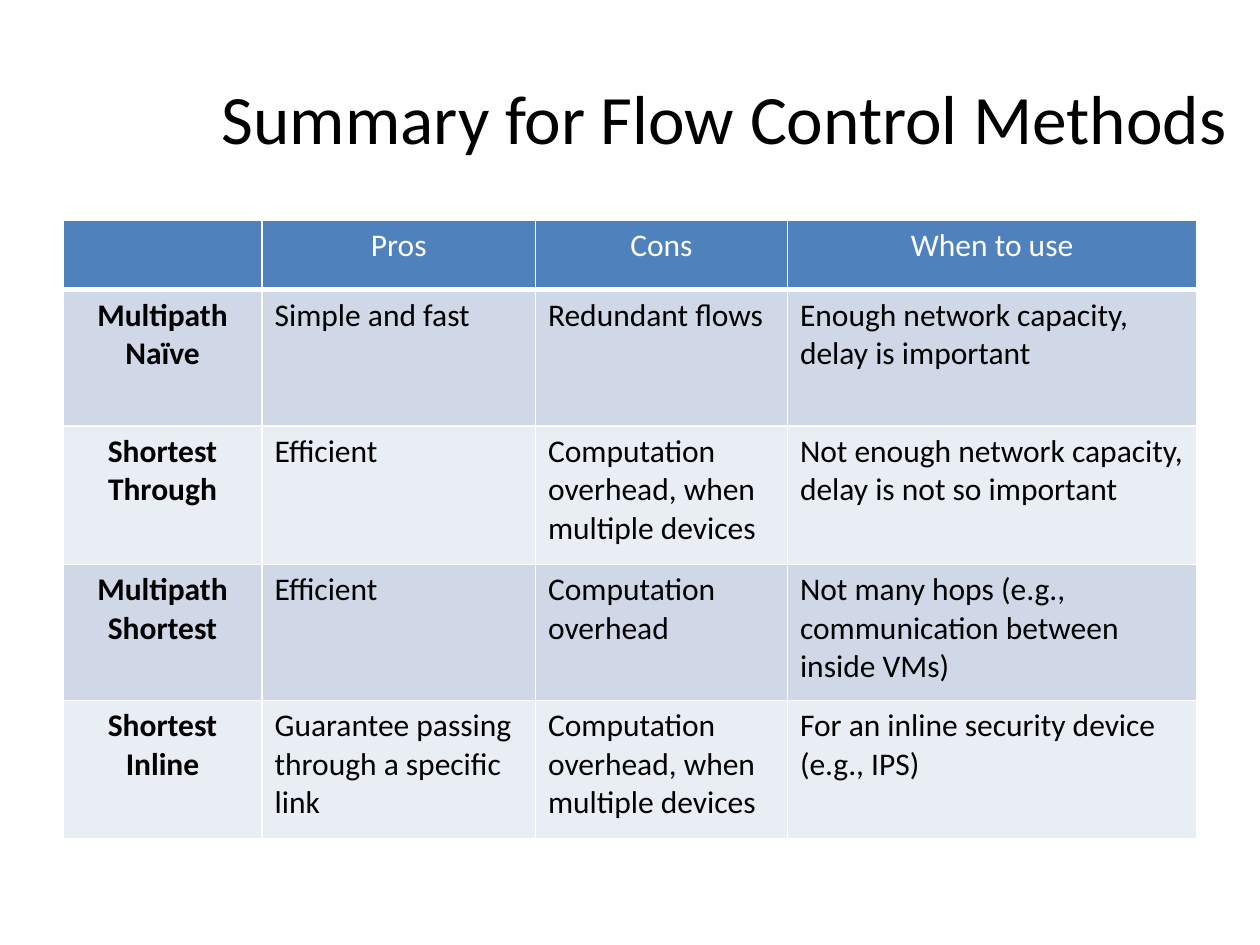
import pptx
import pptx.util
import pptx.dml.color
import pptx.enum.text
import pptx.oxml.ns
import lxml.etree

Inches, Pt = pptx.util.Inches, pptx.util.Pt
RGBColor = pptx.dml.color.RGBColor
PP_ALIGN = pptx.enum.text.PP_ALIGN
qn = pptx.oxml.ns.qn

BLACK = RGBColor(0x00, 0x00, 0x00)
WHITE = RGBColor(0xFF, 0xFF, 0xFF)
HEADER = RGBColor(0x4F, 0x81, 0xBD)
BANDS = [RGBColor(0xE9, 0xED, 0xF4), RGBColor(0xD0, 0xD8, 0xE8)]

COLS = [1.58, 2.17, 2, 3.25]
ROWS = [0.55, 1.08, 1.1, 1.08, 1.1]
METHODS = [
    ["", "Pros", "Cons", "When to use"],
    ["Multipath Naïve", "Simple and fast", "Redundant flows",
     "Enough network capacity, delay is important"],
    ["Shortest Through", "Efficient",
     "Computation overhead, when multiple devices",
     "Not enough network capacity,\ndelay is not so important"],
    ["Multipath Shortest", "Efficient", "Computation overhead",
     "Not many hops (e.g., communication between inside VMs)"],
    ["Shortest Inline", "Guarantee passing through a specific link",
     "Computation overhead, when multiple devices",
     "For an inline security device (e.g., IPS)"],
]


def format_text(tf, size, color, bold, align):
    for p in tf.paragraphs:
        p.alignment = align
        for r in p.runs:
            r.font.name = "Calibri"
            r.font.size = Pt(size)
            r.font.bold = bold
            r.font.color.rgb = color


def add_borders(cell, widths):
    # Border lines come before the fill in the cell properties
    tc_pr = cell._tc.get_or_add_tcPr()
    for i, (side, width) in enumerate(widths.items()):
        ln = lxml.etree.Element(qn("a:ln" + side), w=str(Pt(width)))
        fill = lxml.etree.SubElement(ln, qn("a:solidFill"))
        lxml.etree.SubElement(fill, qn("a:srgbClr"), val=str(WHITE))
        tc_pr.insert(i, ln)


prs = pptx.Presentation()
prs.slide_width, prs.slide_height = Inches(10), Inches(7.5)
s = prs.slides.add_slide(prs.slide_layouts[6])

# Title
sp = s.shapes.add_textbox(Inches(1.5), Inches(0.3), Inches(8.5), Inches(1.25))
tf = sp.text_frame
tf.word_wrap = True
tf.vertical_anchor = pptx.enum.text.MSO_ANCHOR.MIDDLE
tf.text = "Summary for Flow Control Methods"
format_text(tf, 39.6, BLACK, False, PP_ALIGN.CENTER)

# Table grid
table = s.shapes.add_table(len(ROWS), len(COLS), Inches(0.5), Inches(1.75),
                           Inches(sum(COLS)), Inches(sum(ROWS))).table
for col, width in zip(table.columns, COLS):
    col.width = Inches(width)
for row, height in zip(table.rows, ROWS):
    row.height = Inches(height)

# Header row, bold method names, banded body
for i, texts in enumerate(METHODS):
    for j, text in enumerate(texts):
        cell = table.cell(i, j)
        header = i == 0
        cell.text_frame.text = text
        format_text(cell.text_frame, 18, WHITE if header else BLACK,
                    not header and j == 0,
                    PP_ALIGN.CENTER if header or j == 0 else PP_ALIGN.LEFT)
        cell.fill.solid()
        cell.fill.fore_color.rgb = HEADER if header else BANDS[i % 2]
        add_borders(cell, {"L": 1, "R": 1, "T": 1, "B": 3 if header else 1})

prs.save("out.pptx")
